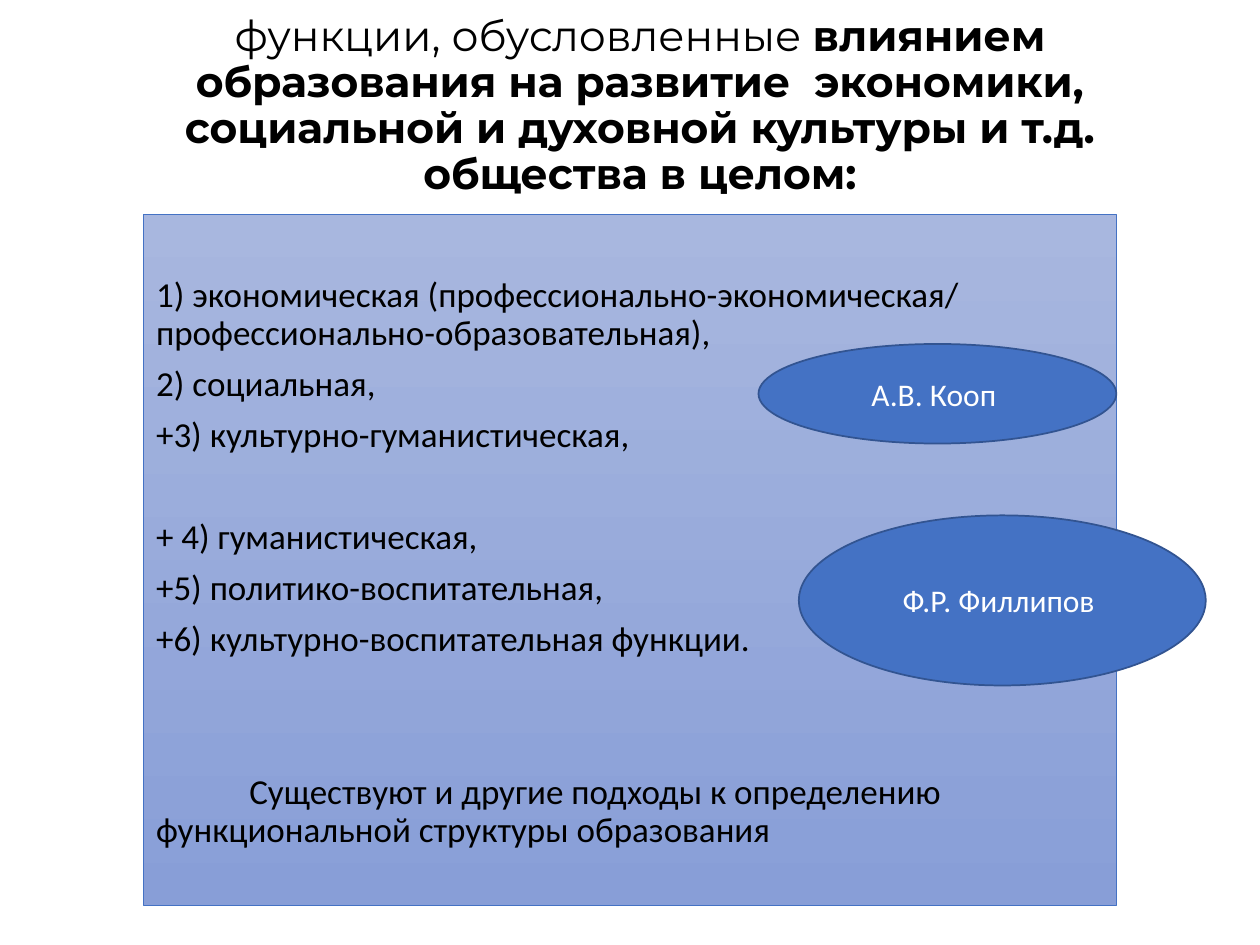
from pptx import Presentation, util as u
from pptx.dml.color import RGBColor
from pptx.enum import shapes, text

BLACK = RGBColor(0x00, 0x00, 0x00)
WHITE = RGBColor(0xFF, 0xFF, 0xFF)
BLUE = RGBColor(0x44, 0x72, 0xC4)
DARK_BLUE = RGBColor(0x32, 0x54, 0x91)
PANEL_TOP = RGBColor(0xA8, 0xB7, 0xDF)
PANEL_BOTTOM = RGBColor(0x88, 0x9E, 0xD7)

GAP = 7.5    # points between paragraphs
PITCH = 29.2  # points for one skipped line


def format_run(r, font, size, color, bold=False):
    r.font.name = font
    r.font.size = u.Pt(size)
    r.font.bold = bold
    r.font.color.rgb = color


def add_shape(s, kind, box, line_color, line_width):
    sp = s.shapes.add_shape(kind, *[u.Inches(v) for v in box])
    sp.shadow.inherit = False
    sp.line.color.rgb = line_color
    sp.line.width = u.Pt(line_width)
    sp.text_frame.word_wrap = True
    return sp


prs = Presentation()
prs.slide_width = u.Inches(10)
prs.slide_height = u.Inches(7.5)
s = prs.slides.add_slide(prs.slide_layouts[6])

# Title
sp = s.shapes.add_textbox(u.Inches(0.75), u.Inches(0.05), u.Inches(8.66), u.Inches(1.6))
tf = sp.text_frame
tf.word_wrap = True
tf.vertical_anchor = text.MSO_ANCHOR.MIDDLE
p = tf.paragraphs[0]
p.alignment = text.PP_ALIGN.CENTER
p.line_spacing = 0.9
for words, bold in [
    ("функции, обусловленные ", False),
    ("влиянием образования на развитие  экономики, социальной и "
     "духовной культуры и т.д. общества в целом:", True),
]:
    r = p.add_run()
    r.text = words
    format_run(r, "Montserrat", 24.3, BLACK, bold)

# Panel with the list of functions
sp = add_shape(s, shapes.MSO_SHAPE.RECTANGLE, (1.14, 1.7, 7.72, 5.49), BLUE, 0.5)
sp.fill.gradient()
sp.fill.gradient_angle = 270
for stop, color in zip(sp.fill.gradient_stops, (PANEL_TOP, PANEL_BOTTOM)):
    stop.color.rgb = color
tf = sp.text_frame
tf.vertical_anchor = text.MSO_ANCHOR.TOP
tf.margin_top = u.Inches(0.5)

# Wording and number of lines skipped above it
items = [
    ("1) экономическая (профессионально-экономическая/ профессионально-образовательная),", 0),
    ("2) социальная,", 0),
    ("+3) культурно-гуманистическая,", 0),
    ("+ 4) гуманистическая,", 1),
    ("+5) политико-воспитательная,", 0),
    ("+6) культурно-воспитательная функции.", 0),
    ("Существуют и другие подходы к определению функциональной структуры образования", 2),
]
for i, (words, skipped) in enumerate(items):
    p = tf.add_paragraph() if i else tf.paragraphs[0]
    p.text = words
    p.alignment = text.PP_ALIGN.LEFT
    p.line_spacing = 0.9
    p.space_before = u.Pt(GAP + skipped * PITCH if i else 0)
    format_run(p.runs[0], "Calibri", 20, BLACK)

# First-line indent of the closing remark
p._p.get_or_add_pPr().set("indent", str(u.Inches(0.74)))

# Author ellipses
for name, box in [
    ("А.В. Кооп ", (6.02, 2.73, 2.84, 0.79)),
    ("Ф.Р. Филлипов ", (6.34, 4.09, 3.23, 1.35)),
]:
    sp = add_shape(s, shapes.MSO_SHAPE.OVAL, box, DARK_BLUE, 1)
    sp.fill.solid()
    sp.fill.fore_color.rgb = BLUE
    tf = sp.text_frame
    tf.text = name
    tf.vertical_anchor = text.MSO_ANCHOR.MIDDLE
    p = tf.paragraphs[0]
    p.alignment = text.PP_ALIGN.CENTER
    format_run(p.runs[0], "Calibri", 18, WHITE)

prs.save("out.pptx")
